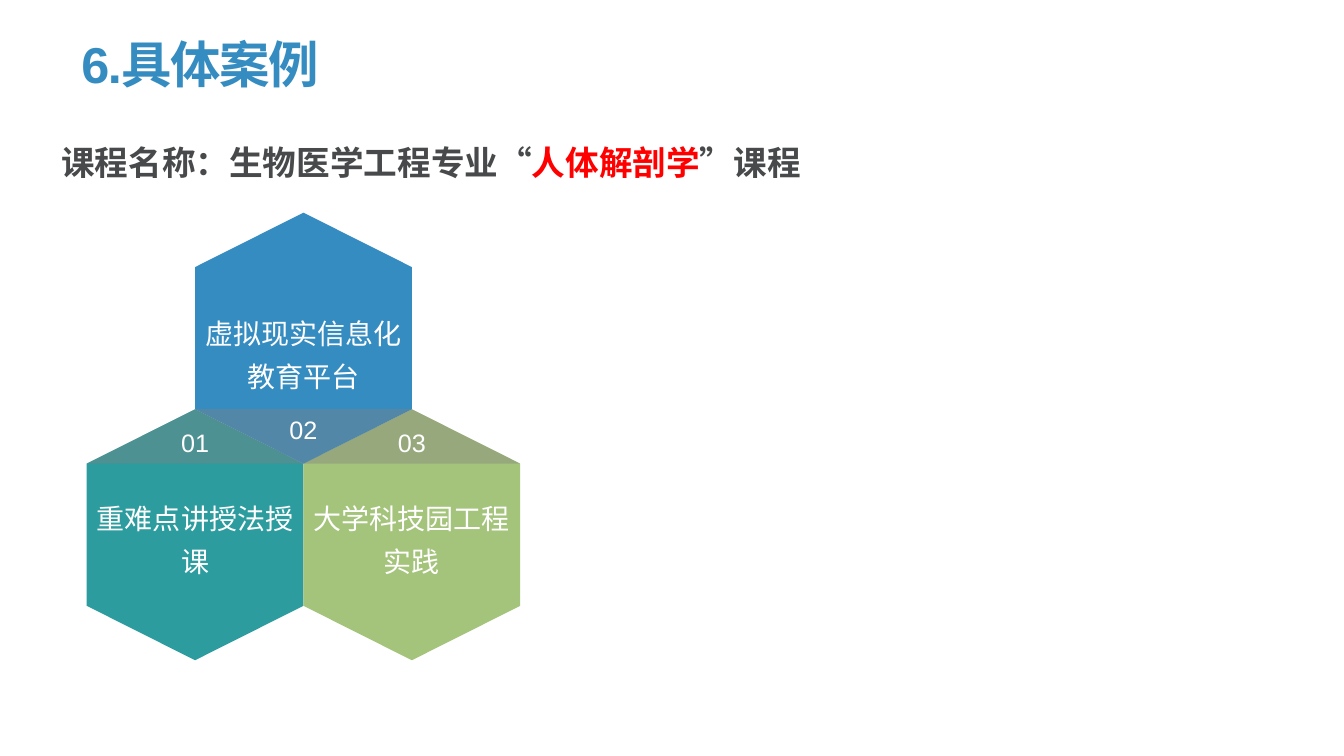
from lxml.etree import SubElement
from pptx import Presentation
from pptx.dml.color import RGBColor
from pptx.enum.text import MSO_ANCHOR, PP_ALIGN
from pptx.oxml.ns import qn
from pptx.util import Inches, Pt

CJK = "Noto Sans CJK SC"
WHITE = "FFFFFF"


def draw(points, color):
    """Add a closed, unlined polygon through points given in inches."""
    dots = [(Inches(x), Inches(y)) for x, y in points]
    form = slide.shapes.build_freeform(*dots[0], scale=1.0)
    form.add_line_segments(dots[1:], close=True)
    shape = form.convert_to_shape()
    shape.shadow.inherit = False
    shape.fill.solid()
    shape.fill.fore_color.rgb = RGBColor.from_string(color)
    shape.line.fill.background()
    return shape


def style(run, size, color, face="Arial", bold=False):
    font = run.font
    font.size, font.name, font.bold = Pt(size), face, bold
    font.color.rgb = RGBColor.from_string(color)
    SubElement(font._element, qn("a:ea")).set("typeface", CJK)


deck = Presentation()
deck.slide_width, deck.slide_height = Inches(13.33), Inches(7.5)
slide = deck.slides.add_slide(deck.slide_layouts[6])

# Three hexagons meeting at the centre: middle x, top y, colour, label, top inset
half, slope, tall = 1.075, 0.54, 2.49
mid, top, low = 3.01, 2.11, 4.06
cells = [
    (mid - half, low, "2D9C9F", "重难点讲授法授课", 0.05),
    (mid + half, low, "A4C37B", "大学科技园工程实践", 0.05),
    (mid, top, "358CC1", "虚拟现实信息化教育平台", 0.28),
]
for x, y, color, label, inset in cells:
    left, right = x - half, x + half
    upper, lower = y + slope, y + tall - slope
    hexagon = draw([(x, y), (right, upper), (right, lower),
                    (x, y + tall), (left, lower), (left, upper)], color)
    frame = hexagon.text_frame
    frame.word_wrap = True
    frame.vertical_anchor = MSO_ANCHOR.MIDDLE
    frame.margin_top = Inches(inset)
    frame.text = label
    para = frame.paragraphs[0]
    para.alignment = PP_ALIGN.CENTER
    para.line_spacing = 1.3
    style(para.runs[0], 20, WHITE, CJK)

# Translucent band behind the numbers
band = draw([(mid - 2 * half, low + slope), (mid - half, low),
             (mid + half, low), (mid + 2 * half, low + slope)], "808080")
tint = band.fill._xPr.find(qn("a:solidFill"))[0]
SubElement(tint, qn("a:alpha")).set("val", "39000")

anchors = [MSO_ANCHOR.BOTTOM, MSO_ANCHOR.TOP, MSO_ANCHOR.BOTTOM]
for i, anchor in enumerate(anchors):
    wide = 0.73
    x = mid + (i - 1) * half - wide / 2
    box = slide.shapes.add_textbox(Inches(x), Inches(low), Inches(wide), Inches(0.53))
    frame = box.text_frame
    frame.word_wrap = False
    frame.vertical_anchor = anchor
    frame.text = f"{i + 1:02}"
    para = frame.paragraphs[0]
    para.alignment = PP_ALIGN.CENTER
    style(para.runs[0], 18, WHITE)

title = slide.shapes.add_textbox(Inches(0.71), Inches(0.29), Inches(11.28), Inches(0.7))
frame = title.text_frame
frame.word_wrap = True
frame.vertical_anchor = MSO_ANCHOR.BOTTOM
frame.text = "6.具体案例"
para = frame.paragraphs[0]
para.line_spacing = 0.9
style(para.runs[0], 36, "358CC1", bold=True)
para.runs[0].font._element.set("spc", "-110")

course = slide.shapes.add_textbox(Inches(0.51), Inches(1.36), Inches(8.89), Inches(0.5))
frame = course.text_frame
frame.word_wrap = True
parts = [
    ("课程名称：生物医学工程专业“", "47494B"),
    ("人体解剖学", "FF0000"),
    ("”课程", "47494B"),
]
for words, color in parts:
    run = frame.paragraphs[0].add_run()
    run.text = words
    style(run, 24, color, bold=True)

deck.save("out.pptx")
